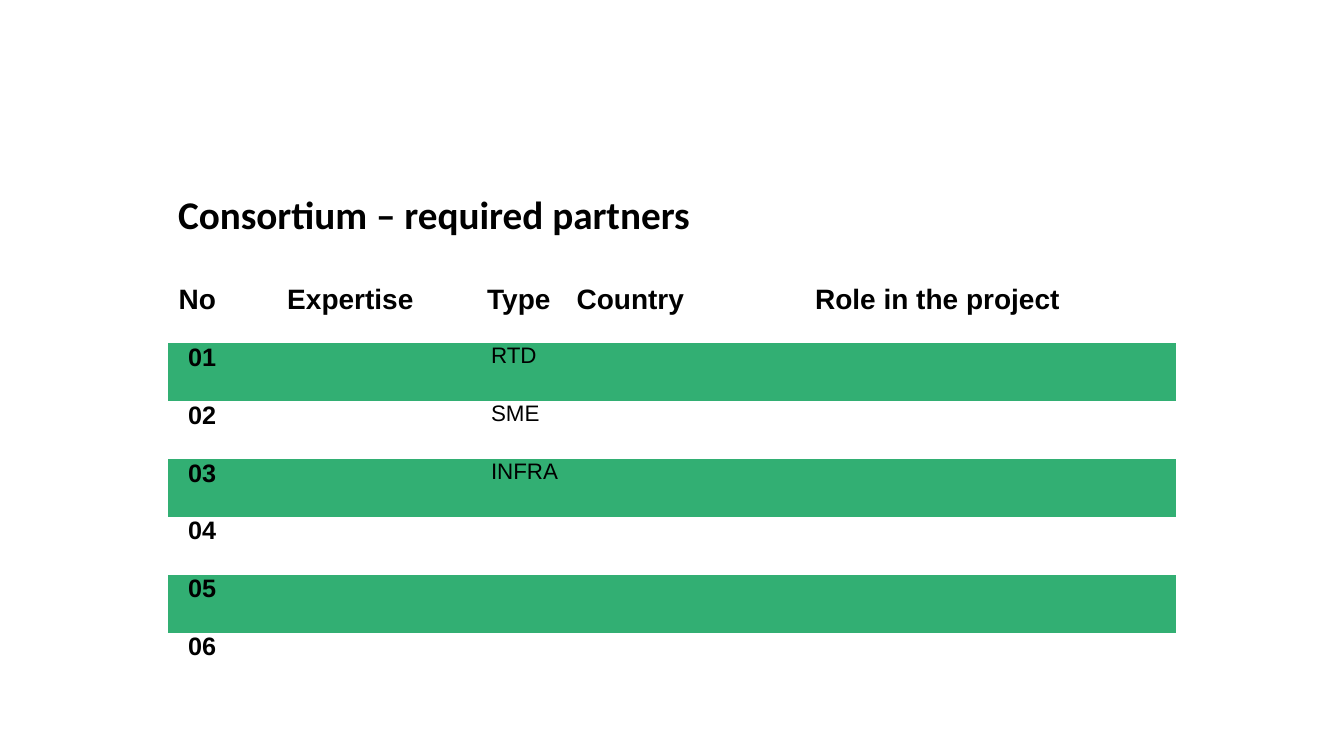
from pptx import Presentation
from pptx.dml.color import RGBColor
from pptx.enum import text
from pptx.util import Pt

COLORS = {"ink": "000000", "band": "32AF73"}
LEFT, WIDTH = 120, 720
COLUMN_WIDTHS = [60, 142, 80.5, 133, 304.5]
SPACER_HEIGHT, HEADER_HEIGHT, PARTNER_HEIGHT = 21.6, 42.5, 41.4
HEADERS = ["No", "Expertise", "Type", "Country", "Role in the project"]
HEADER_INDENTS = [7.7, 25.2, 26, 9.4, 46.8]
PARTNER_TYPES = ["RTD", "SME", "INFRA", "", "", ""]
MERGED_FROM = 4
NO_GRID_STYLE = "{2D5ABB26-0587-4C30-8999-92F81FD0307C}"


class PartnerSlide:
    def __init__(self, deck):
        self.slide = deck.slides.add_slide(deck.slide_layouts[0])
        subtitle = self.slide.placeholders[1].element
        subtitle.getparent().remove(subtitle)

    def style(self, paragraph, size, font="Arial", bold=True):
        for run in paragraph.runs:
            run.font.name = font
            run.font.size = Pt(size)
            run.font.bold = bold
            run.font.color.rgb = RGBColor.from_string(COLORS["ink"])

    def title(self, wording, top, height):
        heading = self.slide.shapes.title
        heading.left, heading.top = Pt(LEFT), Pt(top)
        heading.width, heading.height = Pt(WIDTH), Pt(height)
        frame = heading.text_frame
        frame.text = wording
        frame.auto_size = text.MSO_AUTO_SIZE.NONE
        frame.vertical_anchor = text.MSO_ANCHOR.BOTTOM
        paragraph = frame.paragraphs[0]
        paragraph.alignment = text.PP_ALIGN.LEFT
        paragraph.line_spacing = 0.9
        self.style(paragraph, 28, "Calibri")

    def table(self, top, row_heights):
        """Add a table without grid, banding or cell margins."""
        frame = self.slide.shapes.add_table(
            len(row_heights), len(COLUMN_WIDTHS),
            Pt(LEFT), Pt(top), Pt(WIDTH), Pt(sum(row_heights)))
        table = frame.table
        table.first_row = table.horz_banding = False
        table._tbl.tblPr.find("{*}tableStyleId").text = NO_GRID_STYLE
        for column, width in zip(table.columns, COLUMN_WIDTHS):
            column.width = Pt(width)
        for row, height in zip(table.rows, row_heights):
            row.height = Pt(height)
        for cell in table.iter_cells():
            cell.margin_left = cell.margin_right = 0
            cell.margin_top = cell.margin_bottom = 0
            cell.fill.background()
        return table

    def entry(self, cell, wording, indent, size, bold=True):
        cell.margin_left = Pt(indent)
        cell.text = wording
        self.style(cell.text_frame.paragraphs[0], size, bold=bold)

    def band(self, row):
        for cell in row.cells:
            cell.fill.solid()
            cell.fill.fore_color.rgb = RGBColor.from_string(COLORS["band"])


def main():
    deck = Presentation()
    deck.slide_width, deck.slide_height = Pt(960), Pt(540)
    page = PartnerSlide(deck)
    page.title("Consortium – required partners", 135.4, 38.2)

    heights = [SPACER_HEIGHT, HEADER_HEIGHT] + [PARTNER_HEIGHT] * len(PARTNER_TYPES)
    partners = page.table(180.7, heights)
    for column, (header, indent) in enumerate(zip(HEADERS, HEADER_INDENTS)):
        page.entry(partners.cell(1, column), header, indent, 20)
    for number, partner_type in enumerate(PARTNER_TYPES, start=1):
        row = number + 1
        if number % 2:
            page.band(partners.rows[row])
        page.entry(partners.cell(row, 0), f"{number:02}", 14.4, 18)
        if partner_type:
            page.entry(partners.cell(row, 2), partner_type, 28.8, 16, bold=False)
        if number >= MERGED_FROM:
            partners.cell(row, 0).merge(partners.cell(row, len(HEADERS) - 1))
    deck.save("out.pptx")


if __name__ == "__main__":
    main()
